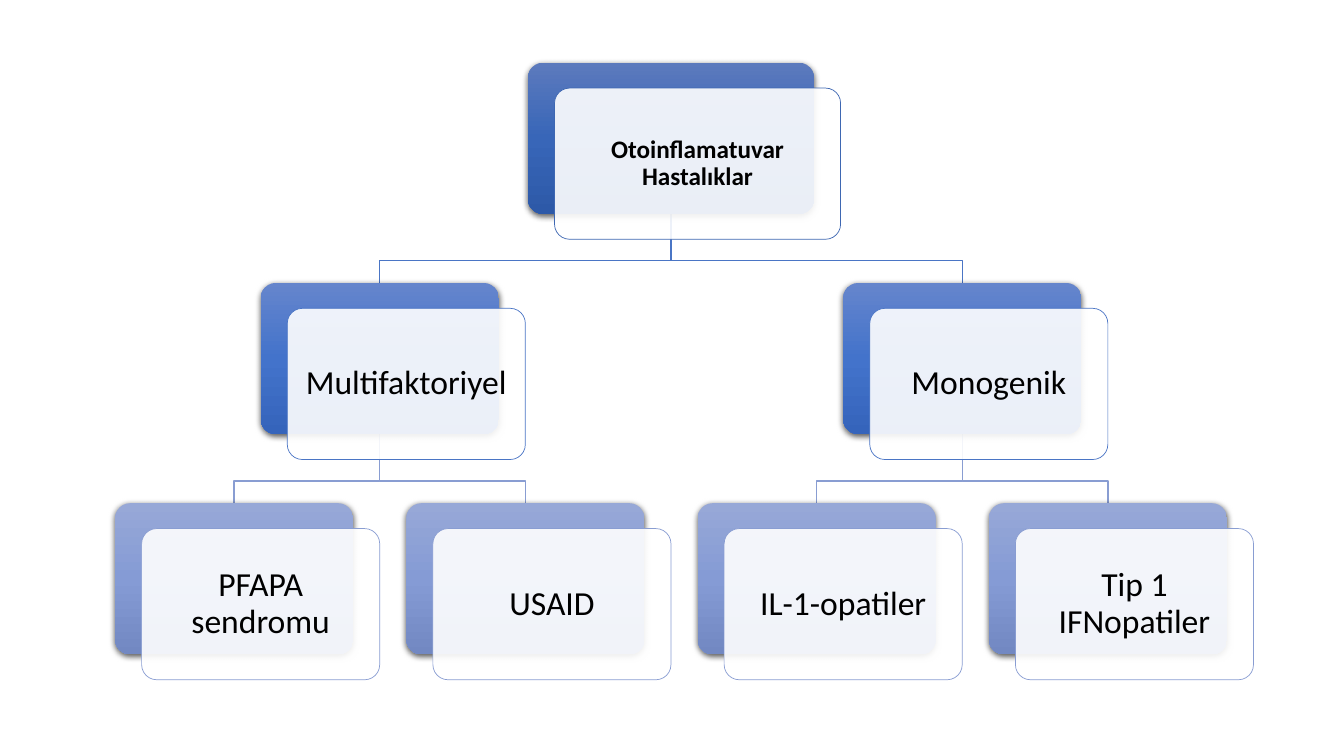
from copy import deepcopy
from dataclasses import dataclass, field

from lxml import etree
from pptx import Presentation
from pptx.dml.color import RGBColor
from pptx.enum.shapes import MSO_SHAPE
from pptx.enum.text import MSO_ANCHOR, PP_ALIGN
from pptx.oxml import parse_xml
from pptx.oxml.ns import nsdecls, qn
from pptx.util import Cm, Pt

ROUNDED = MSO_SHAPE.ROUNDED_RECTANGLE
MIDDLE = MSO_ANCHOR.MIDDLE
CENTER = PP_ALIGN.CENTER


@dataclass(frozen=True)
class Level:
    gradient: tuple
    outline: str
    width: float
    inset: float
    text: dict


@dataclass(frozen=True)
class Theme:
    font: str = "Calibri"
    ink: str = "000000"
    card: str = "FFFFFF"
    card_opacity: int = 90
    card_line: float = 0.5
    link_line: float = 1
    levels: tuple = (
        Level(("5C7ABD", "3866B8", "2D59A8"), "3E67B2", 7.21, 0.18,
              {"size": Pt(18), "bold": True}),
        Level(("6585CC", "4373CB", "3564BB"), "4A75C5", 6, 0.25,
              {"size": Pt(24), "bold": False}),
        Level(("97A8D7", "859BD5", "7288C2"), "899DD2", 6, 0.25,
              {"size": Pt(24), "bold": False}),
    )


@dataclass
class Node:
    label: str
    children: list = field(default_factory=list)
    center: float = 0


# Layout in centimetres
FIRST_TOP, LEVEL_STEP = 1.58, 5.55
FIRST_CENTER, COLUMN_STEP = 5.9, 7.34
BOX_HEIGHT = 3.81
CARD_SHIFT_X, CARD_SHIFT_Y = 0.67, 0.64
BEND_ABOVE_CHILD = 0.56

DISEASES = Node("Otoinflamatuvar Hastalıklar", [
    Node("Multifaktoriyel", [Node("PFAPA sendromu"), Node("USAID")]),
    Node("Monogenik", [Node("IL-1-opatiler"), Node("Tip 1 IFNopatiler")]),
])


def apply_format(target, values):
    for name, value in values.items():
        setattr(target, name, value)


def level_top(depth):
    return FIRST_TOP + depth * LEVEL_STEP


def place(node, leaf_count=0):
    """Centre leaves on the columns and each parent over its children."""
    if not node.children:
        node.center = FIRST_CENTER + leaf_count * COLUMN_STEP
        return leaf_count + 1
    for child in node.children:
        leaf_count = place(child, leaf_count)
    node.center = sum(child.center for child in node.children) / len(node.children)
    return leaf_count


class HierarchySlide:
    def __init__(self, presentation, theme):
        self.theme = theme
        self.slide = presentation.slides.add_slide(presentation.slide_layouts[6])

    def rounded_box(self, left, top, width):
        shape = self.slide.shapes.add_shape(
            ROUNDED, Cm(left), Cm(top), Cm(width), Cm(BOX_HEIGHT))
        shape.adjustments[0] = 0.1
        shape.shadow.inherit = False
        return shape

    def outline(self, shape, color, width):
        shape.line.color.rgb = RGBColor.from_string(color)
        shape.line.width = Pt(width)

    def back_box(self, left, top, level):
        shape = self.rounded_box(left, top, level.width)
        shape.line.fill.background()
        # Three-stop vertical gradient
        shape.fill.gradient()
        shape.fill.gradient_angle = 270
        stop_list = shape._element.spPr.find(".//" + qn("a:gsLst"))
        stop_list.insert(1, deepcopy(stop_list[0]))
        for position, stop, color in zip((0, 0.5, 1), shape.fill.gradient_stops,
                                         level.gradient):
            stop.position = position
            stop.color.rgb = RGBColor.from_string(color)
        # Soft shadow below the box
        shape._element.spPr.find(qn("a:effectLst")).append(parse_xml(
            f'<a:outerShdw {nsdecls("a")} blurRad="{Pt(4.5)}" dist="{Pt(1.5)}" '
            'dir="5400000" algn="ctr" rotWithShape="0"><a:srgbClr val="000000">'
            '<a:alpha val="63000"/></a:srgbClr></a:outerShdw>'))

    def card(self, left, top, level, label):
        shape = self.rounded_box(left, top, level.width)
        shape.fill.solid()
        shape.fill.fore_color.rgb = RGBColor.from_string(self.theme.card)
        color = shape._element.spPr.find(qn("a:solidFill"))[0]
        etree.SubElement(color, qn("a:alpha"), val=str(self.theme.card_opacity * 1000))
        self.outline(shape, level.outline, self.theme.card_line)
        inset = Cm(level.inset)
        frame = shape.text_frame
        apply_format(frame, {
            "word_wrap": True, "vertical_anchor": MIDDLE,
            "margin_left": inset, "margin_right": inset,
            "margin_top": inset, "margin_bottom": inset})
        paragraph = frame.paragraphs[0]
        apply_format(paragraph, {"alignment": CENTER, "line_spacing": 0.9})
        run = paragraph.add_run()
        run.text = label
        apply_format(run.font, {"name": self.theme.font, **level.text})
        run.font.color.rgb = RGBColor.from_string(self.theme.ink)

    def link(self, parent, child, child_depth):
        start = level_top(child_depth - 1) + BOX_HEIGHT
        end = level_top(child_depth)
        bend = end - BEND_ABOVE_CHILD
        builder = self.slide.shapes.build_freeform(Cm(parent.center), Cm(start))
        builder.add_line_segments(
            [(Cm(parent.center), Cm(bend)), (Cm(child.center), Cm(bend)),
             (Cm(child.center), Cm(end))], close=False)
        shape = builder.convert_to_shape()
        shape.shadow.inherit = False
        shape.fill.background()
        self.outline(shape, self.theme.levels[child_depth].outline,
                     self.theme.link_line)

    def links(self, node, depth=0):
        for child in node.children:
            self.links(child, depth + 1)
            self.link(node, child, depth + 1)

    def boxes(self, node, depth=0):
        level = self.theme.levels[depth]
        left, top = node.center - level.width / 2, level_top(depth)
        self.back_box(left, top, level)
        self.card(left + CARD_SHIFT_X, top + CARD_SHIFT_Y, level, node.label)
        for child in node.children:
            self.boxes(child, depth + 1)


def main():
    presentation = Presentation()
    presentation.slide_width, presentation.slide_height = Cm(33.87), Cm(19.05)
    hierarchy = HierarchySlide(presentation, Theme())
    place(DISEASES)
    # Links lie behind the boxes
    hierarchy.links(DISEASES)
    hierarchy.boxes(DISEASES)
    presentation.save("out.pptx")


if __name__ == "__main__":
    main()
